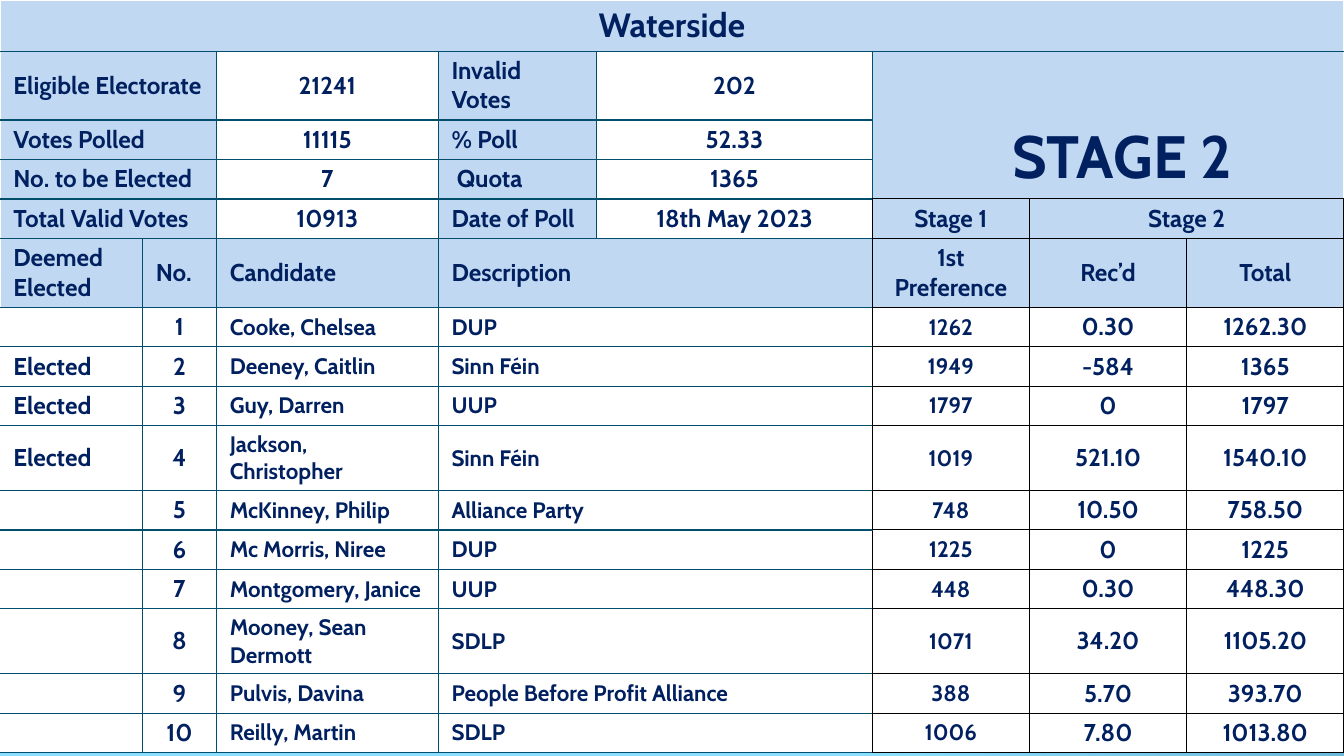
from lxml import etree
from pptx import Presentation
from pptx import util as u
from pptx.dml.color import RGBColor
from pptx.enum import text
from pptx.oxml.ns import qn

NAVY = RGBColor(0x00, 0x20, 0x60)
TEAL = RGBColor(0x00, 0x4E, 0x6C)
PALE = RGBColor(0xC1, 0xD8, 0xF2)
WHITE = RGBColor(0xFF, 0xFF, 0xFF)
BLACK = RGBColor(0x00, 0x00, 0x00)
DEEP_BLUE = RGBColor(0x0D, 0x38, 0x68)
SKY = RGBColor(0x8A, 0xDF, 0xFF)

FONT = "Cabin"
LINE_WIDTHS = {WHITE: 1, TEAL: 0.75, BLACK: 0.5}
COLUMN_WIDTHS = [1.06, 0.55, 1.65, 1.18, 2.05, 1.17, 1.17, 1.17]
ROW_HEIGHTS = [0.37] + [0.28] * 4 + [0.48] + [0.28] * 10
STAGE_ROW, STAGE_COLUMN = 4, 5  # top left of the black-ruled count columns

SUMMARY = [
    ("Eligible Electorate", "21241", "Invalid Votes", "202"),
    ("Votes Polled", "11115", "% Poll", "52.33"),
    ("No. to be Elected", "7", "Quota", "1365"),
    ("Total Valid Votes", "10913", "Date of Poll", "18th May 2023"),
]
HEADINGS = ["Deemed Elected", "No.", "Candidate", "Description",
            "1st Preference", "Rec’d", "Total"]
CANDIDATES = [
    ("", "Cooke, Chelsea", "DUP", "1262", "0.30", "1262.30"),
    ("Elected", "Deeney, Caitlin", "Sinn Féin", "1949", "-584", "1365"),
    ("Elected", "Guy, Darren", "UUP", "1797", "0", "1797"),
    ("Elected", "Jackson, Christopher", "Sinn Féin", "1019", "521.10", "1540.10"),
    ("", "McKinney, Philip", "Alliance Party", "748", "10.50", "758.50"),
    ("", "Mc Morris, Niree", "DUP", "1225", "0", "1225"),
    ("", "Montgomery, Janice", "UUP", "448", "0.30", "448.30"),
    ("", "Mooney, Sean Dermott", "SDLP", "1071", "34.20", "1105.20"),
    ("", "Pulvis, Davina", "People Before Profit Alliance", "388", "5.70", "393.70"),
    ("", "Reilly, Martin", "SDLP", "1006", "7.80", "1013.80"),
]


def draw_edge(cell, tag, color):
    line = etree.SubElement(cell._tc.get_or_add_tcPr(), qn(tag),
                            w=str(u.Pt(LINE_WIDTHS[color])))
    fill = etree.SubElement(line, qn("a:solidFill"))
    etree.SubElement(fill, qn("a:srgbClr"), val=str(color))


def edge_colors(row, column, height, width):
    """Line colours of a block of cells, in the order the file format needs."""
    bottom, right = row + height, column + width
    in_stages = column >= STAGE_COLUMN
    counting = row >= STAGE_ROW
    inner = BLACK if in_stages and counting else TEAL
    if right == len(COLUMN_WIDTHS) and not counting:
        right_color = WHITE
    else:
        right_color = BLACK if right >= STAGE_COLUMN and counting else TEAL
    return {
        "a:lnL": WHITE if column == 0 else inner,
        "a:lnR": right_color,
        "a:lnT": WHITE if row == 0 else inner,
        "a:lnB": BLACK if in_stages and bottom >= STAGE_ROW else TEAL,
    }


def fill_cell(table, row, column, words, size=13, fill=PALE, centered=False,
              height=1, width=1, indent=0.1, anchor=text.MSO_ANCHOR.MIDDLE):
    cell = table.cell(row, column)
    if height > 1 or width > 1:
        cell.merge(table.cell(row + height - 1, column + width - 1))
    colors = edge_colors(row, column, height, width)
    for r in range(row, row + height):
        for c in range(column, column + width):
            part = table.cell(r, c)
            is_origin = (r, c) == (row, column)
            on_rim = {"a:lnL": c == column, "a:lnR": c == column + width - 1,
                      "a:lnT": r == row, "a:lnB": r == row + height - 1}
            for tag, color in colors.items():
                if is_origin or on_rim[tag]:
                    draw_edge(part, tag, color)
            part.fill.solid()
            part.fill.fore_color.rgb = fill
            if not is_origin or not words:
                etree.SubElement(part.text_frame.paragraphs[0]._p,
                                 qn("a:endParaRPr"), sz="1000")
    cell.margin_left, cell.margin_right = u.Inches(indent), u.Inches(0.1)
    cell.margin_top = cell.margin_bottom = u.Pt(2.7)
    cell.vertical_anchor = anchor
    if words:
        para = cell.text_frame.paragraphs[0]
        para.alignment = text.PP_ALIGN.CENTER if centered else text.PP_ALIGN.LEFT
        span = para.add_run()
        span.text = words
        span.font.name, span.font.size, span.font.bold = FONT, u.Pt(size), True
        span.font.color.rgb = NAVY


def fill_summary(table):
    fill_cell(table, 0, 0, "Waterside", 18, centered=True, width=8)
    for row, (label, value, second_label, second_value) in enumerate(SUMMARY, 1):
        fill_cell(table, row, 0, label, width=2)
        fill_cell(table, row, 2, value, fill=WHITE, centered=True)
        fill_cell(table, row, 3, second_label,
                  indent=0.14 if second_label == "Quota" else 0.1)
        fill_cell(table, row, 4, second_value, fill=WHITE, centered=True)
    fill_cell(table, 1, STAGE_COLUMN, "STAGE 2", 32, centered=True, height=3,
              width=3, indent=0.31, anchor=text.MSO_ANCHOR.BOTTOM)
    fill_cell(table, STAGE_ROW, 5, "Stage 1", centered=True)
    fill_cell(table, STAGE_ROW, 6, "Stage 2", centered=True, width=2)


def fill_candidates(table):
    columns = [0, 1, 2, 3, 5, 6, 7]
    for column, heading in zip(columns, HEADINGS):
        fill_cell(table, 5, column, heading, centered=column >= STAGE_COLUMN,
                  width=2 if column == 3 else 1)
    for number, (status, *details) in enumerate(CANDIDATES, 1):
        for column, words in zip(columns, [status, str(number), *details]):
            fill_cell(table, 5 + number, column, words,
                      size=12 if column in (2, 3, 5) else 13, fill=WHITE,
                      centered=column == 1 or column >= STAGE_COLUMN,
                      width=2 if column == 3 else 1)


def add_results(page, left, top, width, height):
    table = page.shapes.add_table(len(ROW_HEIGHTS), len(COLUMN_WIDTHS),
                                  left, top, width, height).table
    table.first_row = table.horz_banding = False
    for column, length in zip(table.columns, COLUMN_WIDTHS):
        column.width = u.Inches(length)
    for row, length in zip(table.rows, ROW_HEIGHTS):
        row.height = u.Inches(length)
    fill_summary(table)
    fill_candidates(table)


def paint_background(page):
    fill = page.background.fill
    fill.gradient()
    fill.gradient_angle = 258
    for stop, color, position in zip(fill.gradient_stops, (DEEP_BLUE, SKY), (0.42, 0.82)):
        stop.color.rgb = color
        stop.position = position


def main():
    deck = Presentation()
    deck.slide_width = u.Inches(10)
    deck.slide_height = deck.slide_width * 9 // 16
    page = deck.slides.add_slide(deck.slide_layouts[6])
    paint_background(page)
    add_results(page, 0, 0, deck.slide_width, u.Inches(5.15))
    deck.save("out.pptx")


if __name__ == "__main__":
    main()
